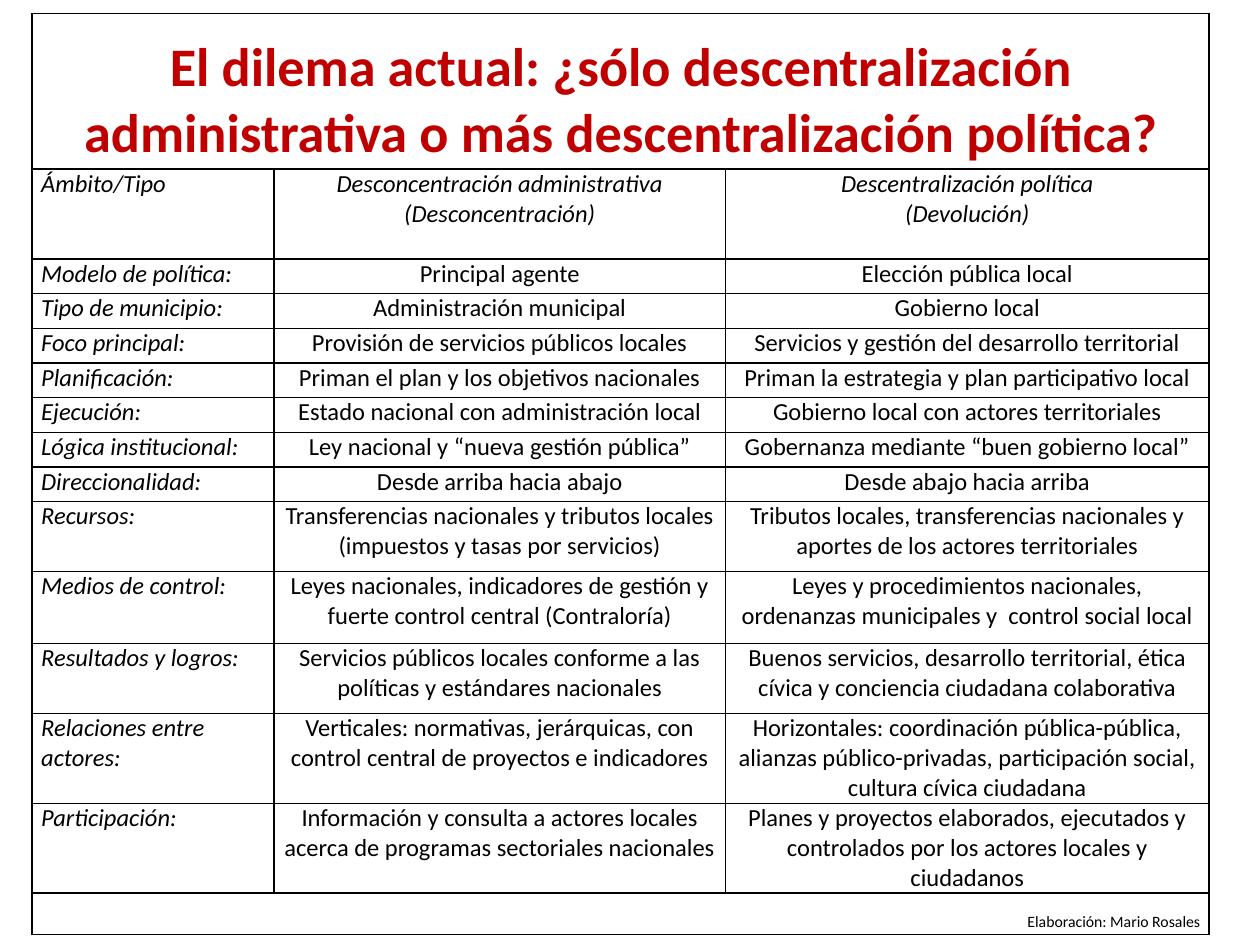
from dataclasses import dataclass
from typing import NamedTuple

from lxml.etree import SubElement
from pptx import Presentation
from pptx.dml.color import RGBColor as RGB
from pptx.enum.text import MSO_ANCHOR as Anchor, PP_ALIGN as Align
from pptx.oxml.ns import qn
from pptx.util import Cm, Pt


@dataclass(frozen=True)
class Theme:
    font: str = "Calibri"
    text: RGB = RGB(0, 0, 0)
    title: RGB = RGB(0xC0, 0, 0)
    paper: RGB = RGB(0xFF, 0xFF, 0xFF)
    border: str = "000000"
    border_width: int = Pt(1)
    title_size: int = Pt(31)
    body_size: int = Pt(14)
    credit_size: int = Pt(9)


@dataclass(frozen=True)
class Style:
    size: int
    color: RGB
    align: Align = Align.CENTER
    bold: bool = False
    italic: bool = False
    top: float = 0  # space above the text, cm


class Row(NamedTuple):
    scope: str
    administrative: str
    political: str
    height: float = 0.7  # cm


THEME = Theme()
TITLE = Style(THEME.title_size, THEME.title, bold=True, top=0.43)
HEADING = Style(THEME.body_size, THEME.text, italic=True)
SCOPE = Style(THEME.body_size, THEME.text, Align.LEFT, italic=True)
BODY = Style(THEME.body_size, THEME.text)
CREDIT = Style(THEME.credit_size, THEME.text, Align.RIGHT, top=0.39)

TITLE_TEXT = ("El dilema actual: ¿sólo descentralización administrativa "
              "o más descentralización política?")
CREDIT_TEXT = "Elaboración: Mario Rosales"
TITLE_HEIGHT, CREDIT_HEIGHT = 3.14, 0.84
COLUMN_WIDTHS = (4.87, 9.11, 9.74)

ROWS = [
    Row("Ámbito/Tipo", "Desconcentración administrativa\n(Desconcentración)",
        "Descentralización política\n(Devolución)", 1.81),
    Row("Modelo de política:", "Principal agente", "Elección pública local"),
    Row("Tipo de municipio:", "Administración municipal", "Gobierno local"),
    Row("Foco principal:", "Provisión de servicios públicos locales",
        "Servicios y gestión del desarrollo territorial"),
    Row("Planificación:", "Priman el plan y los objetivos nacionales",
        "Priman la estrategia y plan participativo local"),
    Row("Ejecución:", "Estado nacional con administración local",
        "Gobierno local con actores territoriales"),
    Row("Lógica institucional:", "Ley nacional y “nueva gestión pública”",
        "Gobernanza mediante “buen gobierno local”"),
    Row("Direccionalidad:", "Desde arriba hacia abajo", "Desde abajo hacia arriba"),
    Row("Recursos:",
        "Transferencias nacionales y tributos locales (impuestos y tasas por servicios)",
        "Tributos locales, transferencias nacionales y aportes de los actores territoriales",
        1.41),
    Row("Medios de control:",
        "Leyes nacionales, indicadores de gestión y fuerte control central (Contraloría)",
        "Leyes y procedimientos nacionales, ordenanzas municipales y  control social local",
        1.45),
    Row("Resultados y logros:",
        "Servicios públicos locales conforme a las políticas y estándares nacionales",
        "Buenos servicios, desarrollo territorial, ética cívica y conciencia "
        "ciudadana colaborativa", 1.41),
    Row("Relaciones entre actores:",
        "Verticales: normativas, jerárquicas, con control central de proyectos e indicadores",
        "Horizontales: coordinación pública-pública, alianzas público-privadas, "
        "participación social, cultura cívica ciudadana", 1.81),
    Row("Participación:",
        "Información y consulta a actores locales acerca de programas sectoriales nacionales",
        "Planes y proyectos elaborados, ejecutados y controlados por los actores "
        "locales y ciudadanos", 1.81),
]


def format_cell(cell) -> None:
    """Borders on all four sides, then the fill that must follow them."""
    tc_pr = cell._tc.get_or_add_tcPr()
    for side in ("a:lnL", "a:lnR", "a:lnT", "a:lnB"):
        ln = SubElement(tc_pr, qn(side), w=str(THEME.border_width))
        fill = SubElement(ln, qn("a:solidFill"))
        SubElement(fill, qn("a:srgbClr"), val=THEME.border)
    cell.fill.solid()
    cell.fill.fore_color.rgb = THEME.paper


def write_cell(cell, text: str, style: Style) -> None:
    cell.margin_left = cell.margin_right = Cm(0.18)
    cell.margin_top, cell.margin_bottom = Cm(style.top), 0
    cell.vertical_anchor = Anchor.TOP
    tf = cell.text_frame
    tf.text = text
    for p in tf.paragraphs:
        p.alignment = style.align
        for r in p.runs:
            r.font.name, r.font.size = THEME.font, style.size
            r.font.bold, r.font.italic = style.bold, style.italic
            r.font.color.rgb = style.color


def write_banner(table, row: int, text: str, style: Style) -> None:
    """A row merged across the whole table."""
    cell = table.cell(row, 0)
    cell.merge(table.cell(row, len(table.columns) - 1))
    write_cell(cell, text, style)


def main() -> None:
    prs = Presentation()
    prs.slide_width, prs.slide_height = Cm(25.4), Cm(19.05)
    slide = prs.slides.add_slide(prs.slide_layouts[6])

    # Table grid
    heights = [TITLE_HEIGHT, *(row.height for row in ROWS), CREDIT_HEIGHT]
    table = slide.shapes.add_table(
        len(heights), len(COLUMN_WIDTHS), Cm(0.65), Cm(0.27),
        Cm(sum(COLUMN_WIDTHS)), Cm(sum(heights))).table
    table.first_row = table.horz_banding = False
    for column, width in zip(table.columns, COLUMN_WIDTHS):
        column.width = Cm(width)
    for table_row, height in zip(table.rows, heights):
        table_row.height = Cm(height)
    for cell in table.iter_cells():
        format_cell(cell)

    # Title, comparison and credit
    write_banner(table, 0, TITLE_TEXT, TITLE)
    for i, row in enumerate(ROWS, start=1):
        value_style = HEADING if i == 1 else BODY
        write_cell(table.cell(i, 0), row.scope, SCOPE)
        write_cell(table.cell(i, 1), row.administrative, value_style)
        write_cell(table.cell(i, 2), row.political, value_style)
    write_banner(table, len(heights) - 1, CREDIT_TEXT, CREDIT)

    prs.save("out.pptx")


if __name__ == "__main__":
    main()
